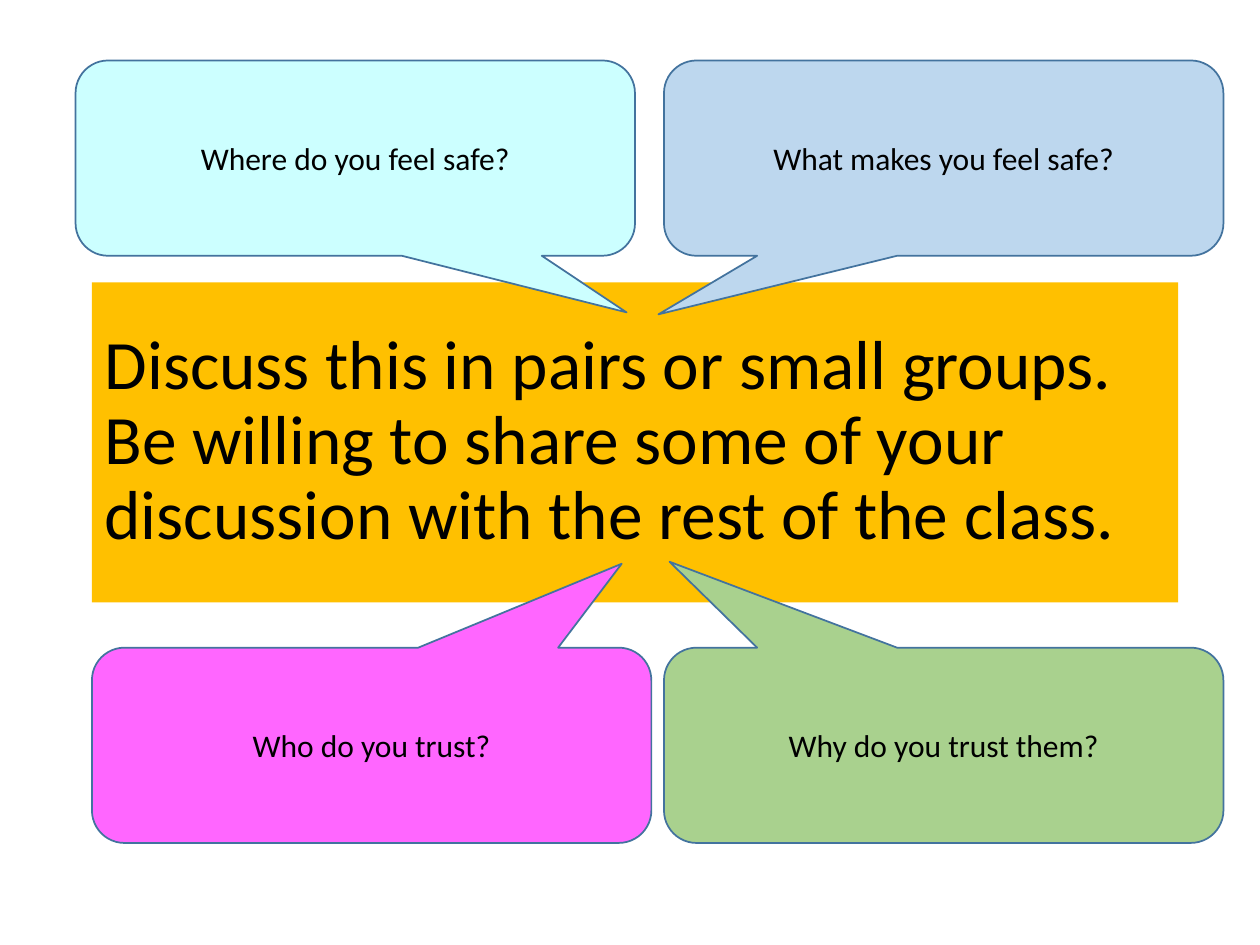
from pptx import Presentation
from pptx.dml.color import RGBColor
from pptx.enum.shapes import MSO_SHAPE
from pptx.enum.text import MSO_ANCHOR, MSO_AUTO_SIZE, PP_ALIGN
from pptx.util import Inches, Pt

COLORS = {
    "black": "000000",
    "amber": "FFC000",
    "edge": "43739E",
    "blue": "BDD7EE",
    "cyan": "CCFFFF",
    "pink": "FF66FF",
    "green": "A9D18E",
}
FONT = "Calibri"
WIDTH, HEIGHT = 4.44, 1.55
TOP, BOTTOM = 0.48, 5.14
RIGHT = 5.27

# text, colour, left, top, pointer tip (x, y) relative to the bubble centre
BUBBLES = [
    ("What makes you feel safe?", "blue", RIGHT, TOP, (-0.51, 0.8)),
    ("Where do you feel safe?", "cyan", 0.6, TOP, (0.485, 0.79)),
    ("Who do you trust?", "pink", 0.73, BOTTOM, (0.447, -0.93)),
    ("Why do you trust them?", "green", RIGHT, BOTTOM, (-0.49, -0.94)),
]


def color(name):
    return RGBColor.from_string(COLORS[name])


def paint(shape, name):
    shape.fill.solid()
    shape.fill.fore_color.rgb = color(name)


def add_run(para, text, size):
    run = para.add_run()
    run.text = text
    run.font.name = FONT
    run.font.size = Pt(size)
    run.font.color.rgb = color("black")


def set_title(slide, lines):
    title = slide.shapes.title
    title.left, title.top = Inches(0.73), Inches(2.24)
    title.width, title.height = Inches(8.62), Inches(2.54)
    paint(title, "amber")
    frame = title.text_frame
    frame.word_wrap = True
    frame.auto_size = MSO_AUTO_SIZE.NONE
    frame.vertical_anchor = MSO_ANCHOR.MIDDLE
    para = frame.paragraphs[0]
    para.alignment = PP_ALIGN.LEFT
    para.line_spacing = 0.9
    for i, line in enumerate(lines):
        if i:
            para.add_line_break()
        add_run(para, line, 39.6)


def add_bubble(slide, text, fill, left, top, tip):
    bubble = slide.shapes.add_shape(
        MSO_SHAPE.ROUNDED_RECTANGULAR_CALLOUT,
        Inches(left), Inches(top), Inches(WIDTH), Inches(HEIGHT))
    bubble.adjustments[0], bubble.adjustments[1] = tip
    bubble.shadow.inherit = False
    paint(bubble, fill)
    bubble.line.color.rgb = color("edge")
    bubble.line.width = Pt(1)
    frame = bubble.text_frame
    frame.word_wrap = True
    frame.vertical_anchor = MSO_ANCHOR.MIDDLE
    para = frame.paragraphs[0]
    para.alignment = PP_ALIGN.CENTER
    add_run(para, text, 18)


def main():
    deck = Presentation()
    deck.slide_width, deck.slide_height = Inches(10), Inches(7.5)
    slide = deck.slides.add_slide(deck.slide_layouts.get_by_name("Title Only"))
    set_title(slide, [
        "Discuss this in pairs or small groups.",
        "Be willing to share some of your discussion with the rest of the class.",
    ])
    for bubble in BUBBLES:
        add_bubble(slide, *bubble)
    deck.save("out.pptx")


if __name__ == "__main__":
    main()
